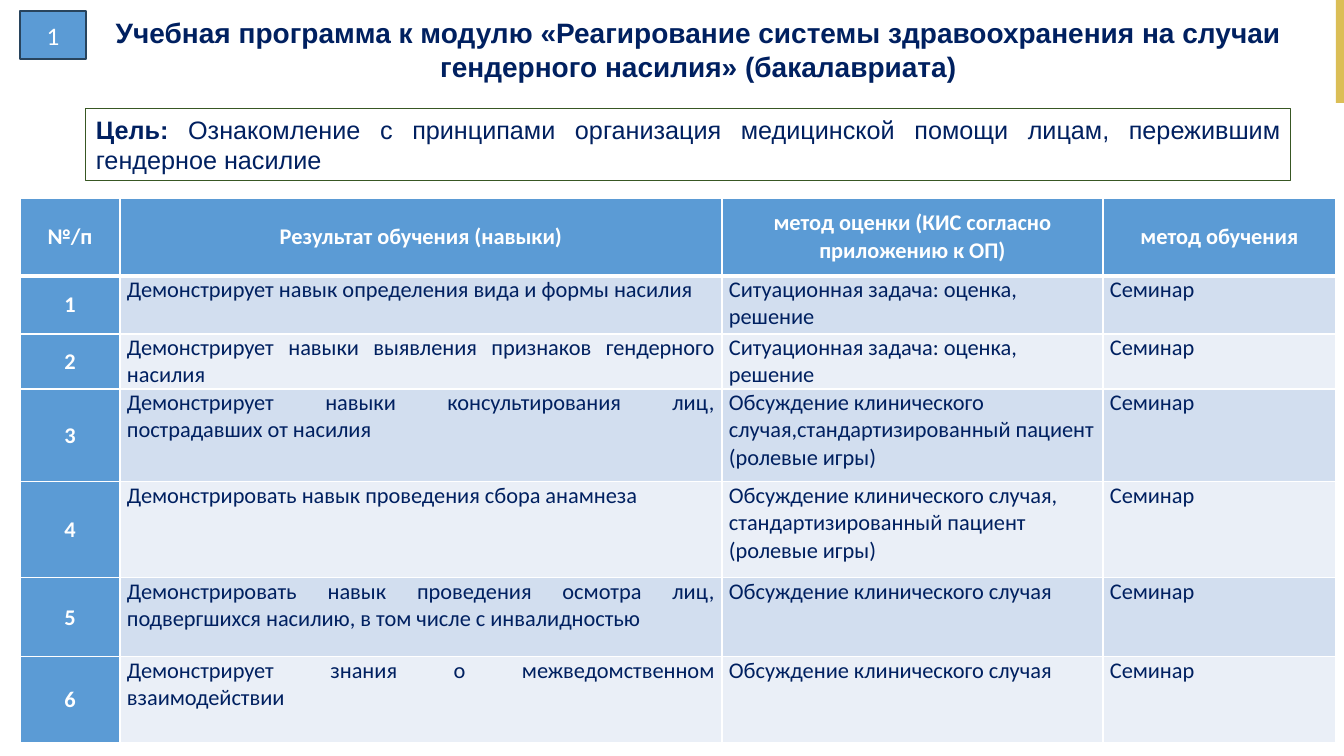
import pptx
import pptx.util
import pptx.dml.color
import pptx.enum.shapes
import pptx.enum.text
import pptx.oxml
import pptx.oxml.ns
from dataclasses import dataclass

TITLE = "Учебная программа к модулю «Реагирование системы здравоохранения на случаи гендерного насилия» (бакалавриата)"
GOAL_LABEL = "Цель: "
GOAL = "Ознакомление с принципами организация медицинской помощи лицам, пережившим гендерное насилие"
BADGE = "1"
HEADERS = ["№/п", "Результат обучения (навыки)",
           "метод оценки (КИС согласно приложению к ОП)", "метод обучения"]
SEMINAR = "Семинар"
TASK = "Ситуационная задача: оценка, решение"
CASE = "Обсуждение клинического случая"
SKILLS = [
    ("Демонстрирует навык определения вида и формы насилия", TASK),
    ("Демонстрирует навыки выявления признаков гендерного насилия", TASK),
    ("Демонстрирует навыки консультирования лиц, пострадавших от насилия",
     CASE + ",стандартизированный пациент (ролевые игры)"),
    ("Демонстрировать навык проведения сбора анамнеза",
     CASE + ", стандартизированный пациент (ролевые игры)"),
    ("Демонстрировать навык проведения осмотра лиц, подвергшихся насилию, в том числе с инвалидностью", CASE),
    ("Демонстрирует знания о межведомственном взаимодействии", CASE),
]

PAGE_SIZE = (1344, 756)
ACCENT_AT = (1336, 0, 8, 103)
BADGE_AT = (20, 11, 66, 48)
TITLE_AT = (86, 11, 1225, 78)
GOAL_AT = (86, 109, 1205, 72)
TABLE_AT = (20, 198)
COLUMNS = [100, 602, 381, 233]
ROWS = [78, 58, 55, 93, 96, 79, 86]
CELL_INSET = 7
EMU_PER_PX = 914400 / 100.8

ALIGN = pptx.enum.text.PP_ALIGN
ANCHOR = pptx.enum.text.MSO_ANCHOR


@dataclass(frozen=True)
class Theme:
    navy: str = "002060"
    white: str = "FFFFFF"
    blue: str = "5B9BD5"
    badge_line: str = "28445D"
    goal_line: str = "385723"
    gold: str = "DBBE56"
    bands: tuple = ("D2DEEF", "EAEFF7")
    heading_font: str = "Arial"
    body_font: str = "Calibri"
    title_size: int = 20
    goal_size: int = 18
    badge_size: int = 18
    table_size: int = 16
    thin: float = 0.75
    regular: int = 1
    thick: int = 3


THEME = Theme()


def px(length):
    return pptx.util.Emu(round(length * EMU_PER_PX))


def color(code):
    return pptx.dml.color.RGBColor.from_string(code)


def write(frame, text, *, size, font, tint, bold=False, align=ALIGN.LEFT):
    frame.word_wrap = True
    para = frame.paragraphs[0]
    para.alignment = align
    span = para.add_run()
    span.text = text
    span.font.size = pptx.util.Pt(size)
    span.font.name = font
    span.font.bold = bold
    span.font.color.rgb = color(tint)


def add_box(page, place, fill=None, line=None, width=THEME.regular):
    box = page.shapes.add_shape(pptx.enum.shapes.MSO_SHAPE.RECTANGLE, *map(px, place))
    box.shadow.inherit = False
    if fill:
        box.fill.solid()
        box.fill.fore_color.rgb = color(fill)
    else:
        box.fill.background()
    if line:
        box.line.color.rgb = color(line)
        box.line.width = pptx.util.Pt(width)
    else:
        box.line.fill.background()
    return box


def set_borders(cell, **widths):
    properties = cell._tc.get_or_add_tcPr()
    for side in "LRTB":
        width = pptx.util.Pt(widths.get(side, THEME.regular))
        properties.append(pptx.oxml.parse_xml(
            f'<a:ln{side} {pptx.oxml.ns.nsdecls("a")} w="{width}"><a:solidFill>'
            f'<a:srgbClr val="{THEME.white}"/></a:solidFill></a:ln{side}>'))


def add_program(page):
    numbered = [(str(n), skill, check, SEMINAR) for n, (skill, check) in enumerate(SKILLS, 1)]
    place = map(px, (*TABLE_AT, sum(COLUMNS), sum(ROWS)))
    table = page.shapes.add_table(len(ROWS), len(COLUMNS), *place).table
    for column, width in zip(table.columns, COLUMNS):
        column.width = px(width)
    for row, height in zip(table.rows, ROWS):
        row.height = px(height)
    for r, texts in enumerate([HEADERS, *numbered]):
        for c, text in enumerate(texts):
            cell = table.cell(r, c)
            strong = r == 0 or c == 0
            cell.margin_left = cell.margin_right = px(CELL_INSET)
            cell.margin_top = cell.margin_bottom = 0
            cell.vertical_anchor = ANCHOR.MIDDLE if strong else ANCHOR.TOP
            set_borders(cell, **({0: {"B": THEME.thick}, 1: {"T": THEME.thick}}.get(r, {})))
            cell.fill.solid()
            cell.fill.fore_color.rgb = color(THEME.blue if strong else THEME.bands[(r - 1) % 2])
            align = ALIGN.CENTER if strong else ALIGN.JUSTIFY if c == 1 else ALIGN.LEFT
            write(cell.text_frame, text, size=THEME.table_size, font=THEME.body_font,
                  tint=THEME.white if strong else THEME.navy, bold=strong, align=align)


def main():
    deck = pptx.Presentation()
    deck.slide_width, deck.slide_height = map(px, PAGE_SIZE)
    page = deck.slides.add_slide(deck.slide_layouts[6])

    add_box(page, ACCENT_AT, fill=THEME.gold)
    add_program(page)

    badge = add_box(page, BADGE_AT, fill=THEME.blue, line=THEME.badge_line)
    badge.text_frame.vertical_anchor = ANCHOR.MIDDLE
    write(badge.text_frame, BADGE, size=THEME.badge_size, font=THEME.body_font,
          tint=THEME.white, align=ALIGN.CENTER)

    goal = add_box(page, GOAL_AT, line=THEME.goal_line, width=THEME.thin)
    goal.text_frame.vertical_anchor = ANCHOR.TOP
    for text, bold in ((GOAL_LABEL, True), (GOAL, False)):
        write(goal.text_frame, text, size=THEME.goal_size, font=THEME.heading_font,
              tint=THEME.navy, bold=bold, align=ALIGN.JUSTIFY)

    title = page.shapes.add_textbox(*map(px, TITLE_AT))
    write(title.text_frame, TITLE, size=THEME.title_size, font=THEME.heading_font,
          tint=THEME.navy, bold=True, align=ALIGN.CENTER)

    deck.save("out.pptx")


if __name__ == "__main__":
    main()
